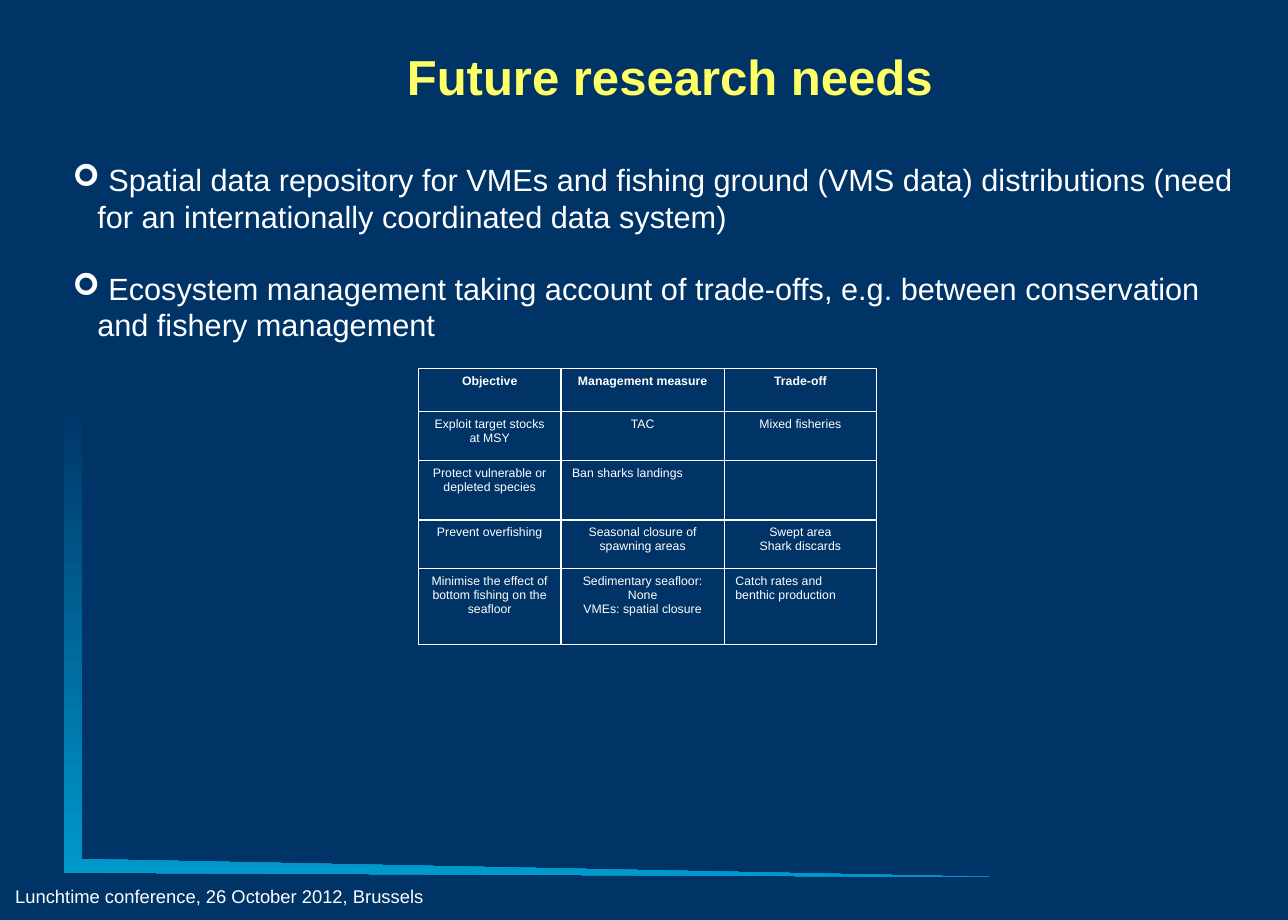
from lxml.etree import SubElement
from pptx import Presentation
from pptx.dml.color import RGBColor
from pptx.enum.text import MSO_ANCHOR, PP_ALIGN
from pptx.oxml.ns import qn
from pptx.util import Cm, Pt

FONT = "Arial"
COLORS = {
    "background": "003366",
    "accent": "0099CC",
    "title": "FFFF66",
    "text": "FFFFFF",
}
BULLET_INDENT = Cm(0.57)

NEEDS = [
    " Spatial data repository for VMEs and fishing ground (VMS data) distributions "
    "(need for an internationally coordinated data system)",
    " Ecosystem management taking account of trade-offs, e.g. between conservation "
    "and fishery management",
]
OBJECTIVES = [
    ["Objective", "Management measure", "Trade-off"],
    ["Exploit target stocks at MSY", "TAC", "Mixed fisheries"],
    ["Protect vulnerable or depleted species", "Ban sharks landings", ""],
    ["Prevent overfishing", "Seasonal closure of spawning areas",
     "Swept area\nShark discards"],
    ["Minimise the effect of bottom fishing on the seafloor",
     "Sedimentary seafloor: None\nVMEs: spatial closure",
     "Catch rates and benthic production"],
]
LEFT_ALIGNED = {(2, 1), (4, 2)}
COLUMN_WIDTHS = [3.28, 3.76, 3.5]
ROW_HEIGHTS = [0.99, 1.12, 1.37, 1.12, 1.75]


def rgb(name):
    return RGBColor.from_string(COLORS[name])


def format_text(frame, size, color="text", bold=False, align=PP_ALIGN.LEFT):
    for paragraph in frame.paragraphs:
        paragraph.alignment = align
        for run in paragraph.runs:
            run.font.name = FONT
            run.font.size = Pt(size)
            run.font.bold = bold
            run.font.color.rgb = rgb(color)


def add_text(slide, text, left, top, width, height, size,
             anchor=MSO_ANCHOR.TOP, **style):
    frame = slide.shapes.add_textbox(Cm(left), Cm(top), Cm(width), Cm(height)).text_frame
    frame.word_wrap = True
    frame.vertical_anchor = anchor
    frame.text = text
    format_text(frame, size, **style)
    return frame


def add_bullet(paragraph):
    properties = paragraph._p.get_or_add_pPr()
    properties.set("marL", str(BULLET_INDENT))
    properties.set("indent", str(-BULLET_INDENT))
    SubElement(properties, qn("a:buFont"), typeface="Wingdings")
    SubElement(properties, qn("a:buChar"), char="➢")


def add_corner_sweep(slide):
    outline = [(1.88, 9.12), (1.88, 19.76), (22.76, 20.17), (1.47, 20.07), (1.47, 9.09)]
    start, *others = [(Cm(x), Cm(y)) for x, y in outline]
    builder = slide.shapes.build_freeform(*start)
    builder.add_line_segments(others, close=True)
    sweep = builder.convert_to_shape()
    sweep.shadow.inherit = False
    sweep.line.fill.background()
    sweep.fill.gradient()
    sweep.fill.gradient_angle = 270
    for stop, color in zip(sweep.fill.gradient_stops, ("background", "accent")):
        stop.color.rgb = rgb(color)


def add_borders(cell):
    properties = cell._tc.get_or_add_tcPr()
    for side in ("lnL", "lnR", "lnT", "lnB"):
        border = SubElement(properties, qn(f"a:{side}"), w=str(Pt(1)))
        fill = SubElement(border, qn("a:solidFill"))
        SubElement(fill, qn("a:srgbClr"), val=COLORS["text"])


def add_objectives_table(slide, left, top):
    table = slide.shapes.add_table(
        len(ROW_HEIGHTS), len(COLUMN_WIDTHS), Cm(left), Cm(top),
        Cm(sum(COLUMN_WIDTHS)), Cm(sum(ROW_HEIGHTS))).table
    table.first_row = table.horz_banding = False
    for column, width in zip(table.columns, COLUMN_WIDTHS):
        column.width = Cm(width)
    for row, height in zip(table.rows, ROW_HEIGHTS):
        row.height = Cm(height)
    for r, texts in enumerate(OBJECTIVES):
        for c, text in enumerate(texts):
            cell = table.cell(r, c)
            cell.text_frame.text = text
            align = PP_ALIGN.LEFT if (r, c) in LEFT_ALIGNED else PP_ALIGN.CENTER
            format_text(cell.text_frame, 8, bold=r == 0, align=align)
            add_borders(cell)
            cell.fill.background()


def main():
    presentation = Presentation()
    presentation.slide_width, presentation.slide_height = Cm(29.64), Cm(21.16)
    slide = presentation.slides.add_slide(presentation.slide_layouts[6])

    # Background and corner decoration
    slide.background.fill.solid()
    slide.background.fill.fore_color.rgb = rgb("background")
    add_corner_sweep(slide)

    # Title and footer
    add_text(slide, "Future research needs", 3.45, -0.03, 23.95, 3.53, 32,
             anchor=MSO_ANCHOR.MIDDLE, color="title", bold=True, align=PP_ALIGN.CENTER)
    add_text(slide, "Lunchtime conference, 26 October 2012, Brussels",
             0.1, 20.29, 24.89, 0.66, 12, anchor=MSO_ANCHOR.MIDDLE)

    # Research needs
    for i, need in enumerate(NEEDS):
        frame = add_text(slide, need, 1.42, 3.58 + 2.49 * i, 27.81, 1.96, 20)
        add_bullet(frame.paragraphs[0])

    # Trade-offs between objectives
    add_objectives_table(slide, 9.63, 8.48)

    presentation.save("out.pptx")


if __name__ == "__main__":
    main()
